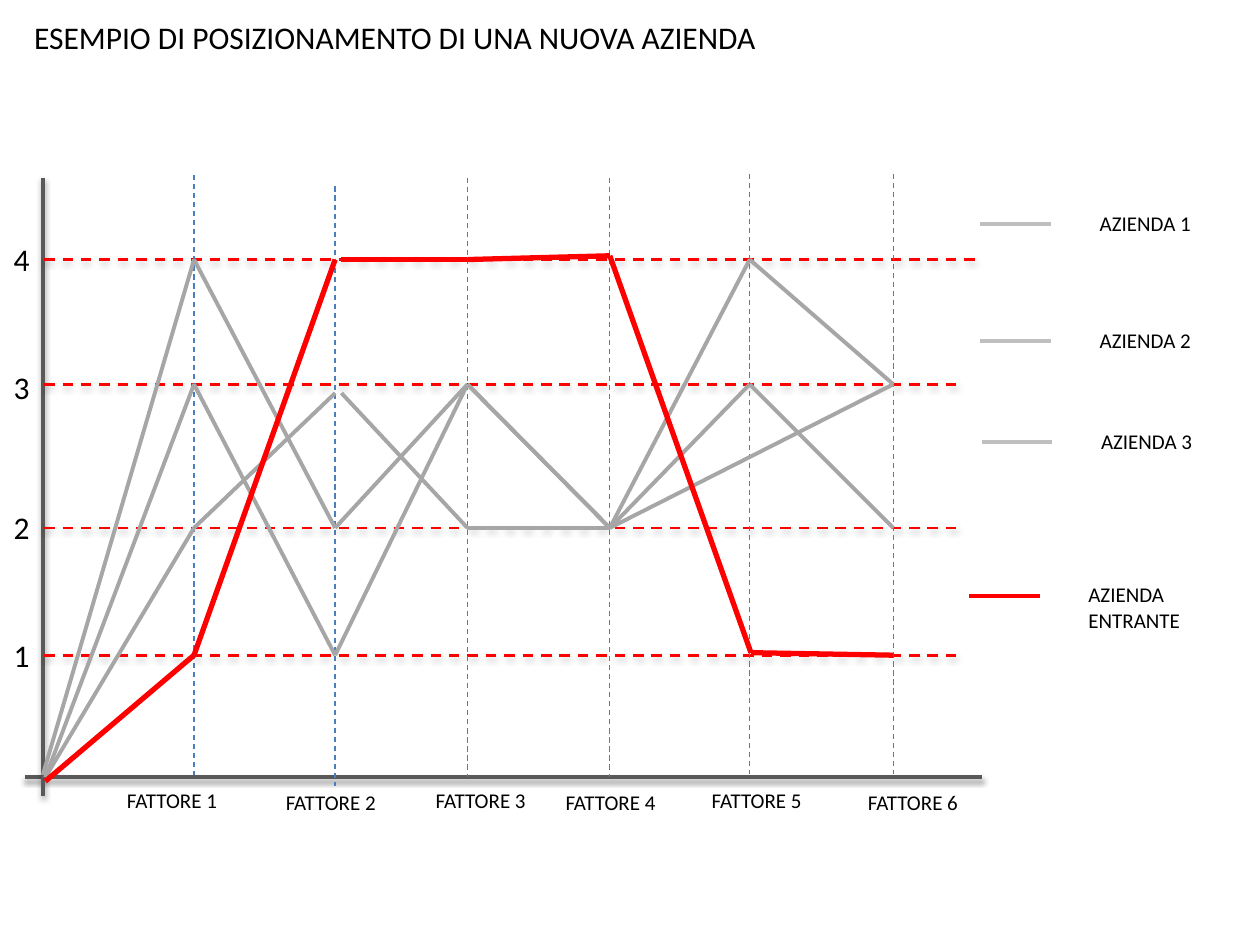
from lxml import etree
from pptx import Presentation
from pptx.dml.color import RGBColor
from pptx.enum.dml import MSO_LINE
from pptx.enum.shapes import MSO_CONNECTOR
from pptx.enum.text import MSO_ANCHOR, PP_ALIGN
from pptx.oxml import parse_xml
from pptx.oxml.ns import nsdecls, qn
from pptx.util import Inches, Pt

STRAIGHT = MSO_CONNECTOR.STRAIGHT
DASH = MSO_LINE.DASH
MIDDLE = MSO_ANCHOR.MIDDLE
LEFT = PP_ALIGN.LEFT

BLACK = RGBColor(0x00, 0x00, 0x00)
AXIS_GREY = RGBColor(0x59, 0x59, 0x59)
RIVAL_GREY = RGBColor(0xA6, 0xA6, 0xA6)
LEGEND_GREY = RGBColor(0xBF, 0xBF, 0xBF)
RED = RGBColor(0xFF, 0x00, 0x00)
BLUE = RGBColor(0x4B, 0x7E, 0xBC)
FONT = "Calibri"

SHADOW = (
    f'<a:effectLst {nsdecls("a")}>'
    '<a:outerShdw blurRad="40000" dist="23000" dir="5400000" rotWithShape="0">'
    '<a:srgbClr val="000000"><a:alpha val="35000"/></a:srgbClr>'
    '</a:outerShdw></a:effectLst>'
)

prs = Presentation()
prs.slide_width, prs.slide_height = Inches(10), Inches(7.5)
slide = prs.slides.add_slide(prs.slide_layouts[5])


def add_line(start, end, color, width, dash=None, shadow=False):
    line = slide.shapes.add_connector(STRAIGHT, *map(Inches, start + end))
    line.line.color.rgb = color
    line.line.width = Pt(width)
    if dash:
        line.line.dash_style = dash
    properties = line._element.spPr
    if shadow:
        properties.append(parse_xml(SHADOW))
    else:
        etree.SubElement(properties, qn("a:effectLst"))


def add_label(text, left, top, width=1.26, height=0.3, size=12):
    label = slide.shapes.add_textbox(*map(Inches, (left, top, width, height)))
    label.text_frame.word_wrap = True
    paragraph = label.text_frame.paragraphs[0]
    paragraph.text = text
    paragraph.font.name = FONT
    paragraph.font.size = Pt(size)
    paragraph.font.color.rgb = BLACK


# Title
title = slide.shapes.title
title.left, title.top = Inches(0), Inches(-0.02)
title.width, title.height = Inches(8.7), Inches(0.62)
title_frame = title.text_frame
title_frame.text = "ESEMPIO DI POSIZIONAMENTO DI UNA NUOVA AZIENDA"
title_frame.margin_left = Inches(0.27)
title_frame.vertical_anchor = MIDDLE
title_frame.paragraphs[0].alignment = LEFT
title_run = title_frame.paragraphs[0].runs[0]
title_run.font.name = FONT
title_run.font.size = Pt(18)
title_run.font.color.rgb = BLACK
title_run._r.rPr.find(qn("a:solidFill")).addnext(parse_xml(SHADOW))

# Axes
add_line((0.2, 6.17), (7.79, 6.17), AXIS_GREY, 2.25, shadow=True)
add_line((0.34, 6.32), (0.34, 1.41), AXIS_GREY, 2.25, shadow=True)

# Score levels
level_y = {1: 5.2, 2: 4.19, 3: 3.05, 4: 2.06}
level_ends = {1: 7.64, 2: 7.65, 3: 7.65, 4: 7.79}
label_tops = {1: 5, 2: 3.98, 3: 2.87, 4: 1.86}
for level, y in level_y.items():
    add_line((0.35, y), (level_ends[level], y), RED, 1.5, DASH, shadow=True)
    add_label(str(level), 0.01, label_tops[level], 0.34, 0.4, 18)

# Factors: position of the guide, its top, and the place of the label
factor_x = [1.54, 2.66, 3.71, 4.84, 5.95, 7.09]
guide_tops = [1.39, 1.48, 1.41, 1.41, 1.38, 1.38]
label_lefts = [0.91, 2.17, 3.36, 4.39, 5.55, 6.79]
for number, (x, top, left) in enumerate(zip(factor_x, guide_tops, label_lefts), 1):
    add_line((x, top), (x, top + 4.76), BLUE, 0.75, DASH)
    add_label(f"FATTORE {number}", left, 6.22 if number % 2 == 0 else 6.2)

# Company profiles, each a list of unbroken stretches
f1, f2, f3, f4, f5, f6 = factor_x
y1, y2, y3, y4 = level_y.values()
after_f2 = 2.71
near_3 = 3.12
origin = (0.36, 6.17)
rivals = [
    [[origin, (f1, y3), (f2, y1), (f3, y3), (f4, y2), (f5, y4), (f6, y3)]],
    [[origin, (f1, y2), (f2, near_3)],
     [(after_f2, near_3), (f3, y2), (f4, y2), (f5, y3), (f6, y2)]],
    [[(0.34, 6.15), (f1, y4), (f2, y2), (f3, y3), (f4, y2), (f6, y3)]],
]
entrant = [
    [(0.36, 6.2), (f1, y1), (f2, y4)],
    [(after_f2, y4), (f3, y4), (f4, 2.03), (5.96, 5.18), (f6, y1)],
]
profiles = [(rival, RIVAL_GREY, 2.25) for rival in rivals] + [(entrant, RED, 3)]
for stretches, color, width in profiles:
    for points in stretches:
        for start, end in zip(points, points[1:]):
            add_line(start, end, color, width)

# Legend
legend = [
    ("AZIENDA 1", 7.78, 1.78, LEGEND_GREY, 0.3),
    ("AZIENDA 2", 7.78, 2.71, LEGEND_GREY, 0.3),
    ("AZIENDA 3", 7.79, 3.51, LEGEND_GREY, 0.3),
    ("AZIENDA ENTRANTE", 7.69, 4.73, RED, 0.5),
]
for company, x, y, color, height in legend:
    add_line((x, y), (x + 0.56, y), color, 2.25)
    add_label(company, x + 0.85, y - 0.16, height=height)

prs.save("out.pptx")
